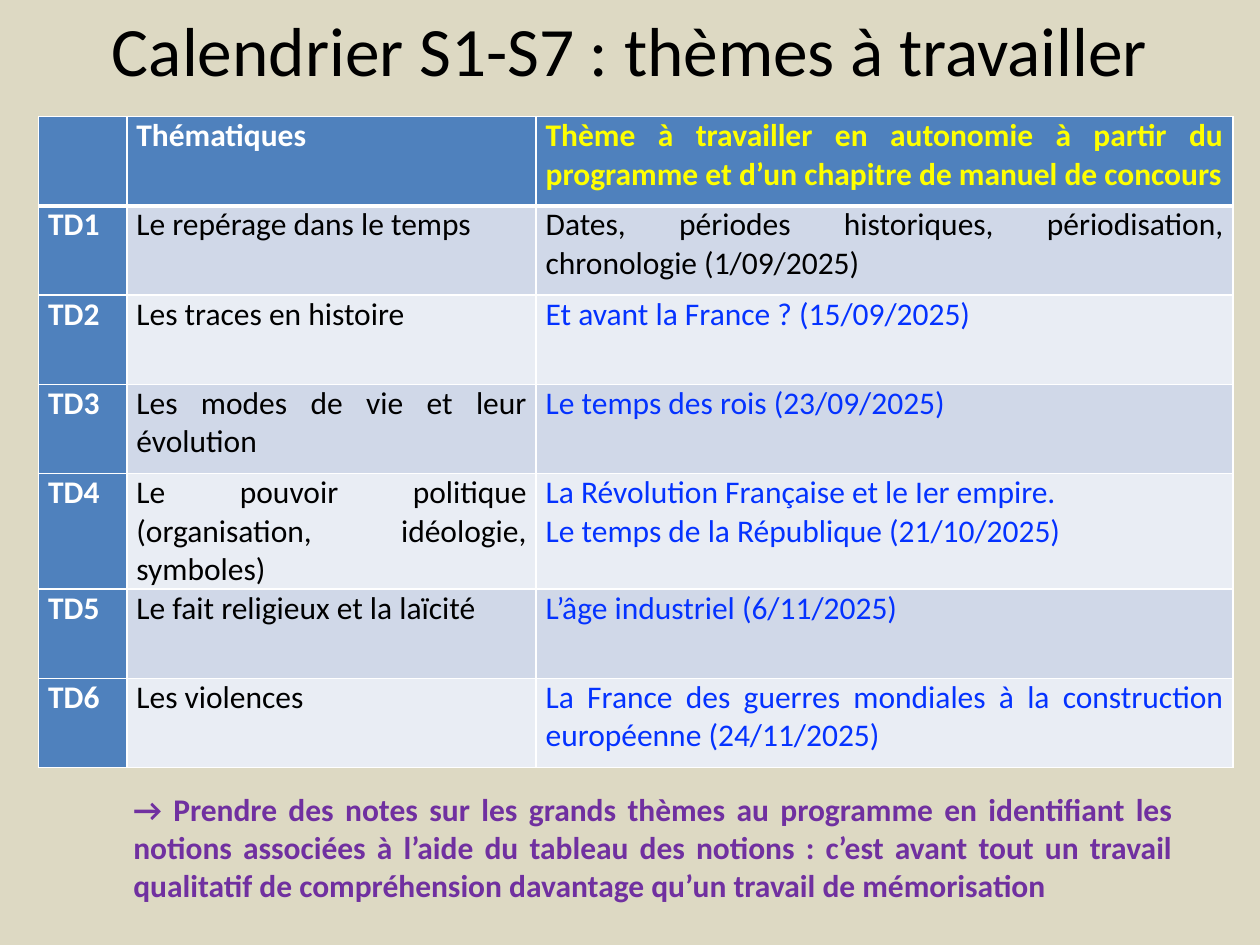
from lxml.etree import SubElement
from pptx import Presentation
from pptx.dml.color import RGBColor
from pptx.enum.text import MSO_ANCHOR as Anchor, MSO_AUTO_SIZE as AutoSize, PP_ALIGN as Align
from pptx.oxml.ns import qn
from pptx.util import Cm, Pt

BLACK = RGBColor(0x00, 0x00, 0x00)
WHITE = RGBColor(0xFF, 0xFF, 0xFF)
YELLOW = RGBColor(0xFF, 0xFF, 0x00)
PURPLE = RGBColor(0x70, 0x30, 0xA0)
INK_BLUE = RGBColor(0x04, 0x32, 0xFF)
HEADER_BLUE = RGBColor(0x4F, 0x81, 0xBD)
BANDS = (RGBColor(0xE9, 0xED, 0xF4), RGBColor(0xD0, 0xD8, 0xE8))
BEIGE = RGBColor(0xDD, 0xD9, 0xC3)

HEADINGS = (
    "",
    "Thématiques",
    "Thème à travailler en autonomie à partir du programme et d’un chapitre de manuel de concours",
)
SESSIONS = (
    ("Le repérage dans le temps",
     "Dates, périodes historiques, périodisation, chronologie (1/09/2025)"),
    ("Les traces en histoire", "Et avant la France ? (15/09/2025)"),
    ("Les modes de vie et leur évolution", "Le temps des rois (23/09/2025)"),
    ("Le pouvoir politique (organisation, idéologie, symboles)",
     "La Révolution Française et le Ier empire.\nLe temps de la République (21/10/2025)"),
    ("Le fait religieux et la laïcité", "L’âge industriel (6/11/2025)"),
    ("Les violences",
     "La France des guerres mondiales à la construction européenne (24/11/2025)"),
)
ADVICE = (
    "→ Prendre des notes sur les grands thèmes au programme en identifiant les notions "
    "associées à l’aide du tableau des notions : c’est avant tout un travail qualitatif "
    "de compréhension davantage qu’un travail de mémorisation"
)


class CalendarSlide:
    font = "Calibri"
    text_size = 18
    column_widths = (Cm(1.78), Cm(8.25), Cm(14.05))
    row_height = Cm(1.8)
    cell_margins = {"margin_left": Cm(0.19), "margin_right": Cm(0.19),
                    "margin_top": 0, "margin_bottom": 0}

    def __init__(self, deck):
        self.slide = deck.slides.add_slide(deck.slide_layouts[5])
        self.slide.background.fill.solid()
        self.slide.background.fill.fore_color.rgb = BEIGE

    def set_text(self, frame, text, color, bold=False, size=text_size, align=Align.JUSTIFY):
        frame.text = text
        style = {"name": self.font, "size": Pt(size), "bold": bold}
        for paragraph in frame.paragraphs:
            paragraph.alignment = align
            for run in paragraph.runs:
                for name, value in style.items():
                    setattr(run.font, name, value)
                run.font.color.rgb = color

    def title(self, text, left, top, width, height):
        title = self.slide.shapes.title
        place = {"left": left, "top": top, "width": width, "height": height}
        for name, value in place.items():
            setattr(title, name, value)
        frame = title.text_frame
        frame.auto_size = AutoSize.NONE
        frame.vertical_anchor = Anchor.MIDDLE
        self.set_text(frame, text, BLACK, size=39.6, align=Align.CENTER)

    def borders(self, cell, widths):
        """Draw white borders; must run before the cell gets its fill."""
        properties = cell._tc.get_or_add_tcPr()
        for side, width in widths.items():
            line = SubElement(properties, qn(f"a:ln{side}"), w=str(Pt(width)))
            solid = SubElement(line, qn("a:solidFill"))
            SubElement(solid, qn("a:srgbClr"), val=str(WHITE))

    def cell_style(self, row, column):
        """Return fill, text colour and boldness for a place in the grid."""
        if row == 0:
            return HEADER_BLUE, YELLOW if column == 2 else WHITE, True
        if column == 0:
            return HEADER_BLUE, WHITE, True
        color = INK_BLUE if column == 2 and row > 1 else BLACK
        return BANDS[row % 2], color, False

    def table(self, rows, left, top):
        table = self.slide.shapes.add_table(
            len(rows), len(self.column_widths), left, top,
            sum(self.column_widths), self.row_height * len(rows)).table
        table.first_col = True
        for column, width in zip(table.columns, self.column_widths):
            column.width = width
        for r, texts in enumerate(rows):
            for c, text in enumerate(texts):
                cell = table.cell(r, c)
                fill, color, bold = self.cell_style(r, c)
                for name, value in self.cell_margins.items():
                    setattr(cell, name, value)
                self.borders(cell, {"L": 1, "R": 1, "T": 3 if r == 1 else 1,
                                    "B": 3 if r == 0 else 1})
                cell.fill.solid()
                cell.fill.fore_color.rgb = fill
                if text:
                    self.set_text(cell.text_frame, text, color, bold)

    def note(self, text, left, top, width, height):
        frame = self.slide.shapes.add_textbox(left, top, width, height).text_frame
        frame.word_wrap = True
        frame.auto_size = AutoSize.SHAPE_TO_FIT_TEXT
        self.set_text(frame, text, PURPLE, bold=True)


def main():
    deck = Presentation()
    deck.slide_width, deck.slide_height = Cm(25.4), Cm(19.05)
    calendar = CalendarSlide(deck)
    calendar.title("Calendrier S1-S7 : thèmes à travailler",
                   Cm(1.27), Cm(0), Cm(22.86), Cm(1.96))
    sessions = [(f"TD{number}", *texts) for number, texts in enumerate(SESSIONS, 1)]
    calendar.table([HEADINGS, *sessions], Cm(0.78), Cm(2.35))
    calendar.note(ADVICE, Cm(2.44), Cm(15.8), Cm(21.46), Cm(2.57))
    deck.save("out.pptx")


if __name__ == "__main__":
    main()
